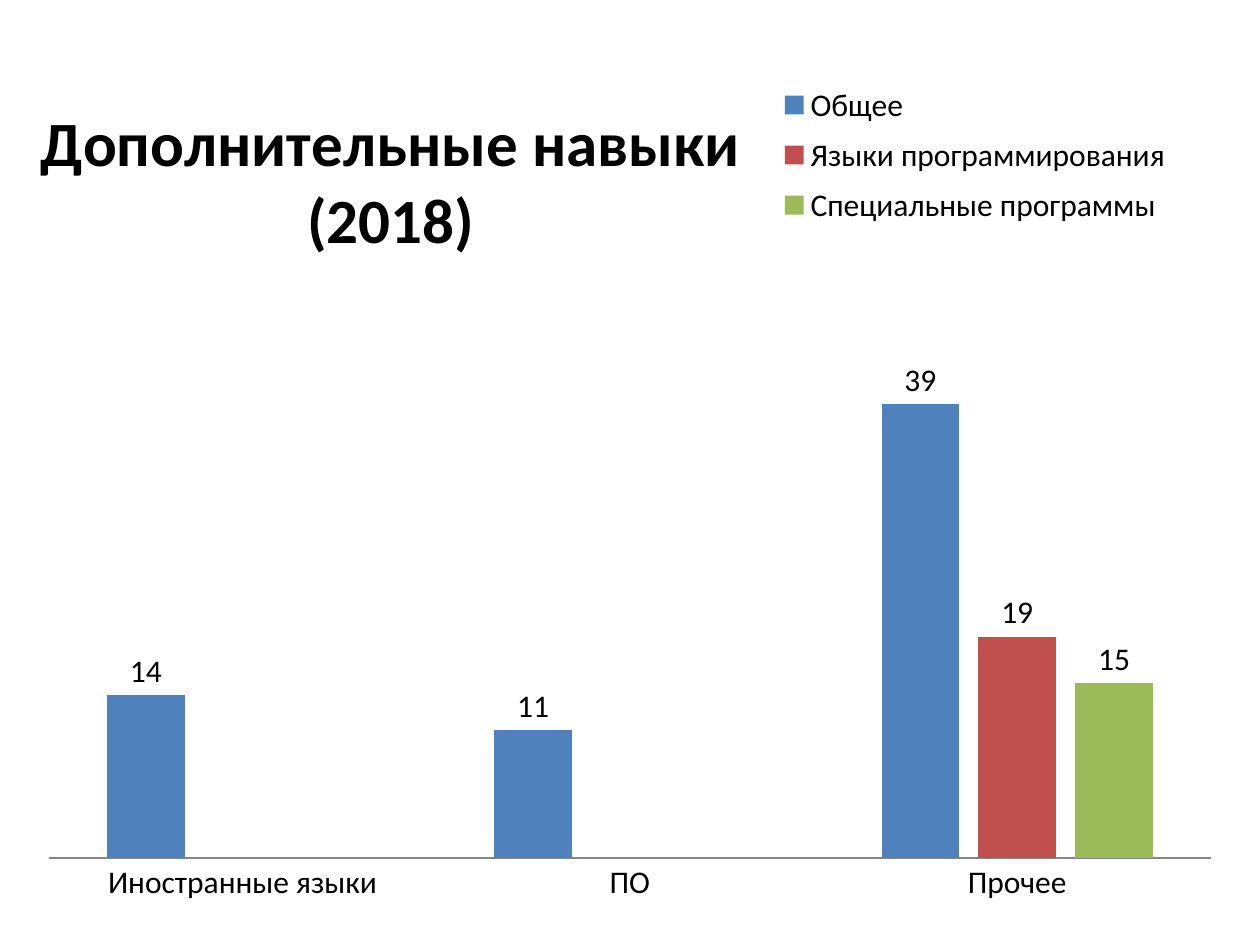
from lxml.etree import SubElement
from pptx import Presentation
from pptx.chart.data import CategoryChartData
from pptx.dml.color import RGBColor
from pptx.enum.chart import XL_CHART_TYPE, XL_LABEL_POSITION, XL_LEGEND_POSITION, XL_TICK_MARK
from pptx.oxml.ns import qn
from pptx.util import Cm, Pt

CATEGORIES = ["Иностранные языки", "ПО", "Прочее"]
SERIES = [
    ("Общее", (14, 11, 39), "4F81BD"),
    ("Языки программирования", (None, None, 19), "C0504D"),
    ("Специальные программы", (None, None, 15), "9BBB59"),
]


def rgb(value):
    return RGBColor.from_string(value)


class Deck:
    """Holds the text style and the current slide."""

    font, size, color, axis_color = "Calibri", 18, "000000", "868686"

    def __init__(self):
        self.prs = Presentation()
        self.prs.slide_width, self.prs.slide_height = Cm(25.4), Cm(19.05)
        self.s = self.prs.slides.add_slide(self.prs.slide_layouts[6])

    def style(self, font, size, bold=False):
        font.name, font.size, font.bold = self.font, Pt(size), bold
        font.color.rgb = rgb(self.color)

    def place(self, chart, tag, index, target=None, **fractions):
        element = chart.element.find(".//" + qn(tag))
        for old in element.findall(qn("c:layout")):
            element.remove(old)
        layout = SubElement(element, qn("c:layout"))
        element.insert(index, layout)
        manual = SubElement(layout, qn("c:manualLayout"))
        if target:
            SubElement(manual, qn("c:layoutTarget")).set("val", target)
        for key in "xy":
            SubElement(manual, qn(f"c:{key}Mode")).set("val", "edge")
        for key, value in fractions.items():
            SubElement(manual, qn(f"c:{key}")).set("val", str(value))

    def columns(self, left, top, width, height, maximum):
        data = CategoryChartData()
        data.categories = CATEGORIES
        for name, values, _ in SERIES:
            data.add_series(name, values)
        chart = self.s.shapes.add_chart(
            XL_CHART_TYPE.COLUMN_CLUSTERED, Cm(left), Cm(top), Cm(width), Cm(height), data
        ).chart
        self.style(chart.font, self.size)
        plot = chart.plots[0]
        plot.gap_width, plot.overlap, plot.vary_by_categories = 150, -25, False
        for series, (_, _, color) in zip(plot.series, SERIES):
            series.format.fill.solid()
            series.format.fill.fore_color.rgb = rgb(color)
            labels = series.data_labels
            labels.show_value = True
            labels.position = XL_LABEL_POSITION.OUTSIDE_END
            self.style(labels.font, self.size)
        axis = chart.category_axis
        axis.major_tick_mark = axis.minor_tick_mark = XL_TICK_MARK.NONE
        axis.format.line.color.rgb = rgb(self.axis_color)
        axis.format.line.width = Pt(0.75)
        values = chart.value_axis
        values.visible = values.has_major_gridlines = False
        values.minimum_scale, values.maximum_scale = 0, maximum
        self.place(chart, "c:plotArea", 0, "inner", x=0.02, y=0.315, w=0.96, h=0.614)
        return chart

    def title(self, chart, lines, size):
        tf = chart.chart_title.text_frame
        tf.text = "\n".join(lines)
        for p in tf.paragraphs:
            self.style(p.font, size, True)
        self.place(chart, "c:title", 1, x=0.01, y=0.04)

    def legend(self, chart):
        chart.has_legend = True
        chart.legend.position = XL_LEGEND_POSITION.TOP
        chart.legend.include_in_layout = False
        self.style(chart.legend.font, self.size)
        self.place(chart, "c:legend", 1, x=0.62, y=0.01, w=0.33, h=0.19)


def main():
    deck = Deck()
    chart = deck.columns(0.5, 1.32, 24.4, 17.2, maximum=45)
    deck.title(chart, ["Дополнительные навыки", "(2018)"], 36)
    deck.legend(chart)
    deck.prs.save("out.pptx")


if __name__ == "__main__":
    main()
